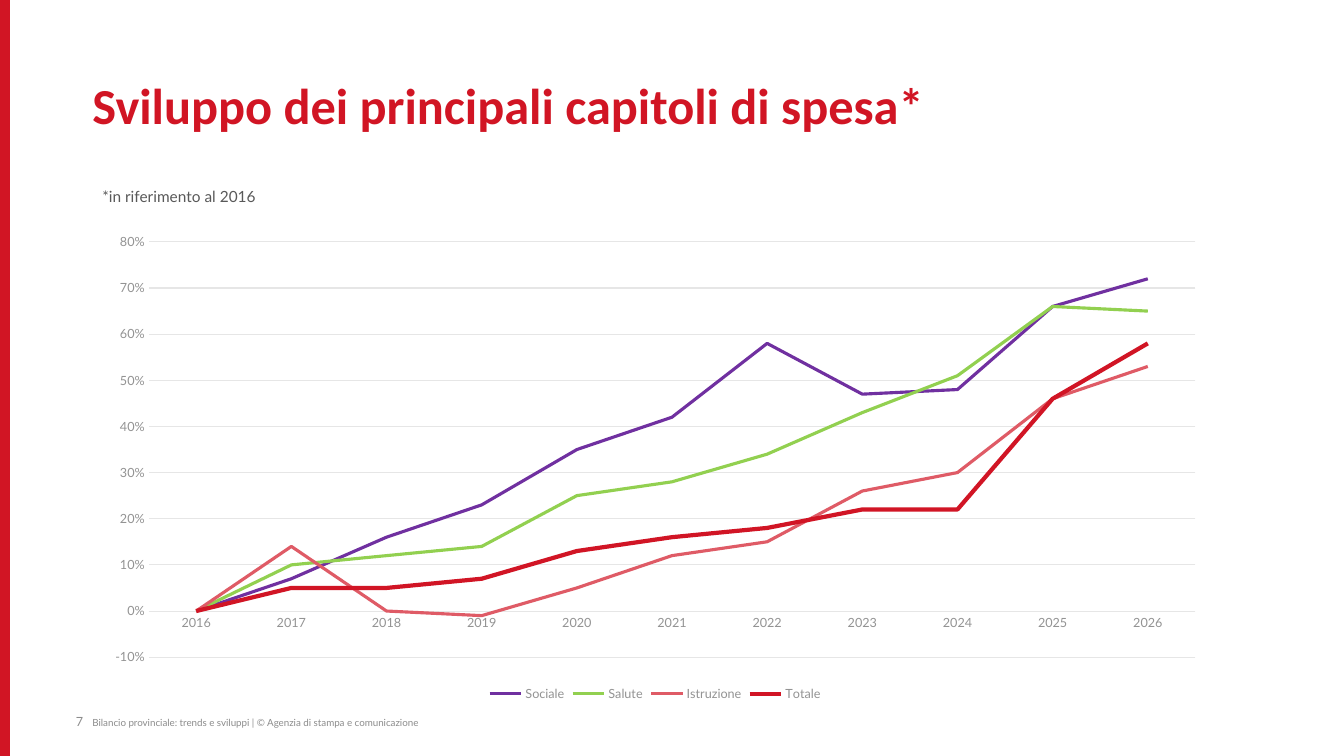
from dataclasses import dataclass

from lxml import etree
from pptx import Presentation
from pptx.chart.data import CategoryChartData
from pptx.dml.color import RGBColor
from pptx.enum.chart import XL_CHART_TYPE, XL_LEGEND_POSITION, XL_TICK_MARK
from pptx.enum.shapes import MSO_CONNECTOR
from pptx.enum.text import PP_ALIGN
from pptx.oxml import parse_xml
from pptx.oxml.ns import nsdecls, qn
from pptx.util import Inches, Pt

LINE_CHART = XL_CHART_TYPE.LINE
BOTTOM = XL_LEGEND_POSITION.BOTTOM
NO_TICK = XL_TICK_MARK.NONE
STRAIGHT = MSO_CONNECTOR.STRAIGHT
LEFT, RIGHT = PP_ALIGN.LEFT, PP_ALIGN.RIGHT

# Grid of square cells, twelve to the inch
COLS, ROWS = 160, 90
CELL = Inches(1) // 12
MARGIN = 11

COLORS = {
    "red": "D11524",
    "footer": "8C8C8C",
    "text": "595959",
    "axis": "939393",
    "grid": "E6E6E6",
    "sociale": "7030A0",
    "salute": "92D050",
    "istruzione": "DF5B66",
    "totale": "D11525",
}


@dataclass
class Label:
    text: str
    col: float
    row: float
    cols: float
    rows: float
    size: float
    color: str
    font: str = "Lato"
    bold: bool = False
    align: PP_ALIGN = LEFT
    inset: tuple[float, float] = (0, 0)
    spacing: float = 1.0


@dataclass
class Spending:
    name: str
    percents: list[int]
    color: str
    width: float = 2.25


LABELS = [
    Label("Sviluppo dei principali capitoli di spesa*", MARGIN, 9.6, 144.7, 12.6,
          36, "red", font="Calibri", bold=True, spacing=0.9),
    Label("Bilancio provinciale: trends e sviluppi | © Agenzia di stampa e comunicazione",
          MARGIN, 85.3, 64.7, 1.2, 7, "footer"),
    Label("7", 2.9, 85, 7, 1.8, 9, "footer", align=RIGHT),
    Label("*in riferimento al 2016", MARGIN, 21.7, 49.2, 4.2, 11, "text",
          inset=(0.1, 0.05)),
]

YEARS = [str(year) for year in range(2016, 2027)]
SPENDING = [
    Spending("Sociale", [0, 7, 16, 23, 35, 42, 58, 47, 48, 66, 72], "sociale"),
    Spending("Salute", [0, 10, 12, 14, 25, 28, 34, 43, 51, 66, 65], "salute"),
    Spending("Istruzione", [0, 14, 0, -1, 5, 12, 15, 26, 30, 46, 53], "istruzione"),
    Spending("Totale", [0, 5, 5, 7, 13, 16, 18, 22, 22, 46, 58], "totale", 3),
]


def cells(count: float) -> int:
    return round(count * CELL)


def rgb(name: str) -> RGBColor:
    return RGBColor.from_string(COLORS[name])


def style_font(font, size: float, color: str, name: str = "Lato", bold: bool = False) -> None:
    font.size, font.name, font.bold = Pt(size), name, bold
    font.color.rgb = rgb(color)


def style_line(line, color: str, width: float) -> None:
    line.color.rgb = rgb(color)
    line.width = Pt(width)


def add_label(slide, label: Label) -> None:
    sp = slide.shapes.add_textbox(cells(label.col), cells(label.row),
                                  cells(label.cols), cells(label.rows))
    tf = sp.text_frame
    tf.word_wrap = True
    tf.margin_left = tf.margin_right = Inches(label.inset[0])
    tf.margin_top = tf.margin_bottom = Inches(label.inset[1])
    p = tf.paragraphs[0]
    p.text = label.text
    p.alignment = label.align
    p.line_spacing = label.spacing
    style_font(p.font, label.size, label.color, label.font, label.bold)


def add_side_bar(slide) -> None:
    bar = slide.shapes.add_connector(STRAIGHT, cells(0.6), 0, cells(0.6), cells(ROWS))
    style_line(bar.line, "red", 7.5)
    etree.SubElement(bar._element.spPr, qn("a:effectLst"))


def place_plot(chart, x: float, y: float, w: float, h: float) -> None:
    """Fix the inner plot area, in shares of the chart's size."""
    plot_area = chart._chartSpace.chart.plotArea
    for old in plot_area.findall(qn("c:layout")):
        plot_area.remove(old)
    plot_area.insert(0, parse_xml(
        f'<c:layout {nsdecls("c")}><c:manualLayout><c:layoutTarget val="inner"/>'
        '<c:xMode val="edge"/><c:yMode val="edge"/>'
        f'<c:x val="{x}"/><c:y val="{y}"/><c:w val="{w}"/><c:h val="{h}"/>'
        '</c:manualLayout></c:layout>'))


def add_spending_chart(slide) -> None:
    data = CategoryChartData(number_format="0%")
    data.categories = YEARS
    for item in SPENDING:
        data.add_series(item.name, [percent / 100 for percent in item.percents])
    chart = slide.shapes.add_chart(LINE_CHART, cells(MARGIN), cells(26.5),
                                   cells(134), cells(57.5), data).chart
    style_font(chart.font, 10, "text")
    chart.has_title = False
    place_plot(chart, 0.05, 0.04, 0.93, 0.86)

    # Series
    plot = chart.plots[0]
    plot.vary_by_categories = False
    for series, item in zip(plot.series, SPENDING):
        series.smooth = False
        style_line(series.format.line, item.color, item.width)

    # Axes
    years, shares = chart.category_axis, chart.value_axis
    for axis in (years, shares):
        axis.major_tick_mark = axis.minor_tick_mark = NO_TICK
        style_font(axis.tick_labels.font, 9, "axis")
    style_line(years.format.line, "grid", 0.75)
    shares.minimum_scale, shares.maximum_scale, shares.major_unit = -0.1, 0.8, 0.1
    shares.tick_labels.number_format = "0%"
    shares.tick_labels.number_format_is_linked = False
    shares.format.line.fill.background()
    style_line(shares.major_gridlines.format.line, "grid", 0.75)

    # Legend
    chart.has_legend = True
    chart.legend.position = BOTTOM
    chart.legend.include_in_layout = False
    style_font(chart.legend.font, 9, "axis")


def main() -> None:
    prs = Presentation()
    prs.slide_width, prs.slide_height = cells(COLS), cells(ROWS)
    slide = prs.slides.add_slide(prs.slide_layouts[6])
    add_side_bar(slide)
    add_spending_chart(slide)
    for label in LABELS:
        add_label(slide, label)
    prs.save("out.pptx")


if __name__ == "__main__":
    main()
